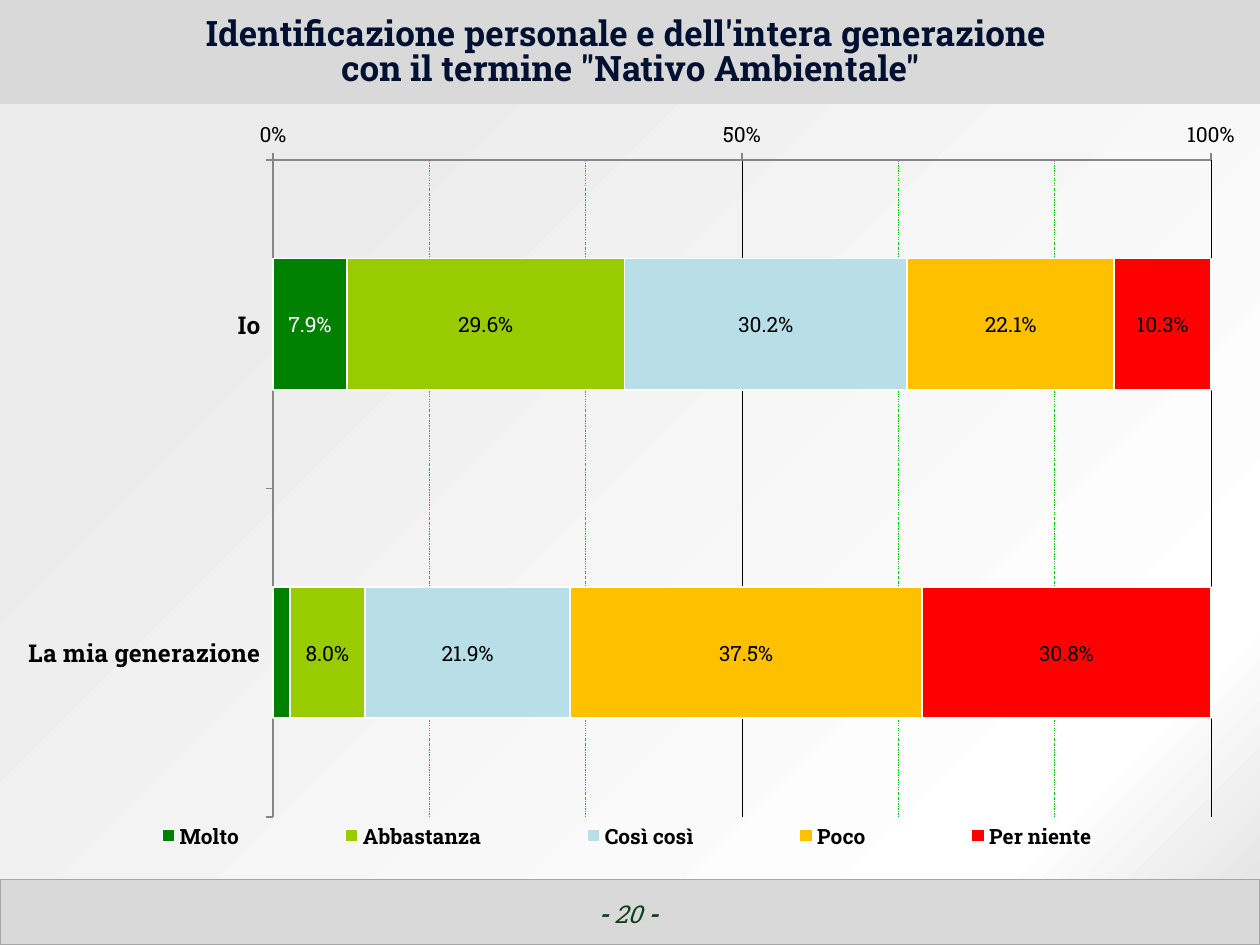
import pptx
import pptx.util
import pptx.chart.data
import pptx.dml.color
import pptx.enum.chart
import pptx.enum.shapes
import pptx.enum.text
import pptx.oxml
import pptx.oxml.ns

SCALE = 914400 / 126
FONT = "Roboto Slab"
INKS = {
    "band": "D9D9D9", "edge": "A6A6A6", "title": "001030", "page": "0D411A",
    "black": "000000", "white": "FFFFFF", "axis": "868686", "minor": "00CC00",
}
CATS = ["Io", "La mia generazione"]
ROWS = [  # name, values, fill
    ("Molto", (0.079, 0.018), "008000"),
    ("Abbastanza", (0.296, 0.08), "99CC00"),
    ("Così così", (0.302, 0.219), "B8DEE8"),
    ("Poco", (0.221, 0.375), "FFC000"),
    ("Per niente", (0.103, 0.308), "FF0000"),
]
STOPS = [(0, "E6E6E6"), (13, "FFFFFF"), (82, "ECECEC")]
CHART = (4, 105, 1256, 774)
PLOT = (273, 160, 938, 657)
LEGEND = (63, 820, 1128, 31)


def px(*nums):
    return [pptx.util.Emu(round(n * SCALE)) for n in nums]


def tint(hexa):
    return pptx.dml.color.RGBColor.from_string(hexa)


def put(item, **vals):
    for key, val in vals.items():
        setattr(item, key, val)


def style(font, size, ink, **vals):
    put(font, name=FONT, size=pptx.util.Pt(size), **vals)
    font.color.rgb = tint(ink)


def stroke(line, ink, width):
    line.color.rgb = tint(ink)
    line.width = pptx.util.Pt(width)


def band(slide, box, ink, edge=None):
    shape = slide.shapes.add_shape(
        pptx.enum.shapes.MSO_SHAPE.RECTANGLE, *px(*box))
    shape.shadow.inherit = False
    shape.fill.solid()
    shape.fill.fore_color.rgb = tint(ink)
    if edge:
        stroke(shape.line, edge, 0.75)
    else:
        shape.line.fill.background()
    return shape


def shade(shape):
    """Swap the plain fill for a round gradient from the lower right."""
    stops = "".join(
        f'<a:gs pos="{pos * 1000}"><a:srgbClr val="{ink}"/></a:gs>'
        for pos, ink in STOPS)
    grad = pptx.oxml.parse_xml(
        f'<a:gradFill {pptx.oxml.ns.nsdecls("a")} rotWithShape="1">'
        f'<a:gsLst>{stops}</a:gsLst><a:path path="circle">'
        '<a:fillToRect l="100000" t="100000"/></a:path></a:gradFill>')
    props = shape._element.spPr
    props.replace(props.find(pptx.oxml.ns.qn("a:solidFill")), grad)


def head(slide, text):
    title = slide.shapes.title
    left, top, width, height = px(20, 4, 1221, 99)
    put(title, left=left, top=top, width=width, height=height)
    put(title.text_frame, text=text, word_wrap=True,
        vertical_anchor=pptx.enum.text.MSO_ANCHOR.MIDDLE)
    para = title.text_frame.paragraphs[0]
    put(para, alignment=pptx.enum.text.PP_ALIGN.CENTER,
        line_spacing=pptx.util.Pt(20))
    for run in para.runs:
        style(run.font, 20, INKS["title"], bold=True)
    slide.shapes._spTree.append(title._element)  # above the top band


def page(slide):
    frame = slide.shapes.add_textbox(*px(481, 893, 294, 66)).text_frame
    frame.word_wrap = True
    para = frame.paragraphs[0]
    para.alignment = pptx.enum.text.PP_ALIGN.CENTER
    for text, bold in (("- ", True), ("20 ", False), ("-", True)):
        run = para.add_run()
        run.text = text
        style(run.font, 14, INKS["page"], bold=bold, italic=True)


def place(part, spot, box, inner=False):
    """Give a chart part a fixed place, as shares of the chart's size."""
    for old in part.findall(pptx.oxml.ns.qn("c:layout")):
        part.remove(old)
    shares = zip("xywh", (
        (box[0] - CHART[0]) / CHART[2], (box[1] - CHART[1]) / CHART[3],
        box[2] / CHART[2], box[3] / CHART[3]))
    target = '<c:layoutTarget val="inner"/>' if inner else ""
    modes = '<c:xMode val="edge"/><c:yMode val="edge"/>'
    sizes = "".join(f'<c:{key} val="{val:.4f}"/>' for key, val in shares)
    part.insert(spot, pptx.oxml.parse_xml(
        f'<c:layout {pptx.oxml.ns.nsdecls("c")}><c:manualLayout>'
        f'{target}{modes}{sizes}</c:manualLayout></c:layout>'))


def dash(axis):
    """Draw the minor gridlines as thin dashes and dots."""
    grid = axis._element.find(pptx.oxml.ns.qn("c:minorGridlines"))
    grid.append(pptx.oxml.parse_xml(
        f'<c:spPr {pptx.oxml.ns.nsdecls("c", "a")}><a:ln w="3175"><a:solidFill>'
        f'<a:srgbClr val="{INKS["minor"]}"/></a:solidFill>'
        '<a:prstDash val="dashDot"/></a:ln></c:spPr>'))


def axes(chart):
    cat, val = chart.category_axis, chart.value_axis
    out = pptx.enum.chart.XL_TICK_MARK.OUTSIDE
    put(cat, reverse_order=True, major_tick_mark=out, has_major_gridlines=False)
    put(val, minimum_scale=0, maximum_scale=1, major_unit=0.5,
        minor_unit=0.5 / 3, major_tick_mark=out,
        has_major_gridlines=True, has_minor_gridlines=True)
    put(val.tick_labels, number_format="0%", number_format_is_linked=False)
    style(cat.tick_labels.font, 14, INKS["black"], bold=True)
    style(val.tick_labels.font, 12, INKS["black"], bold=False)
    for axis in (cat, val):
        stroke(axis.format.line, INKS["axis"], 0.75)
    stroke(val.major_gridlines.format.line, INKS["black"], 0.25)
    dash(val)


def bars(plot):
    put(plot, gap_width=150, overlap=100, vary_by_categories=False)
    for num, (row, ser) in enumerate(zip(ROWS, plot.series)):
        ser.format.fill.solid()
        ser.format.fill.fore_color.rgb = tint(row[2])
        stroke(ser.format.line, INKS["white"], 1)
        tags = ser.data_labels
        put(tags, show_value=True, number_format="0.0%",
            number_format_is_linked=False,
            position=pptx.enum.chart.XL_LABEL_POSITION.CENTER)
        style(tags.font, 12, INKS["black" if num else "white"], bold=False)
    # The thinnest bar has no label
    plot.series[0].data_labels._element.insert(0, pptx.oxml.parse_xml(
        f'<c:dLbl {pptx.oxml.ns.nsdecls("c")}><c:idx val="1"/>'
        '<c:delete val="1"/></c:dLbl>'))


def graph(slide):
    data = pptx.chart.data.CategoryChartData(number_format="0.0%")
    data.categories = CATS
    for name, vals, _ in ROWS:
        data.add_series(name, vals)
    chart = slide.shapes.add_chart(
        pptx.enum.chart.XL_CHART_TYPE.BAR_STACKED_100, *px(*CHART), data).chart
    put(chart, has_title=False, has_legend=True)
    style(chart.font, 14, INKS["black"])
    axes(chart)
    bars(chart.plots[0])
    put(chart.legend, include_in_layout=False,
        position=pptx.enum.chart.XL_LEGEND_POSITION.BOTTOM)
    style(chart.legend.font, 12, INKS["black"], bold=True)
    area = chart._chartSpace.find(".//" + pptx.oxml.ns.qn("c:plotArea"))
    place(area, 0, PLOT, inner=True)
    place(chart.legend._element, 1, LEGEND)


def main():
    deck = pptx.Presentation()
    wide, high = px(1260, 945)
    put(deck, slide_width=wide, slide_height=high)
    slide = deck.slides.add_slide(deck.slide_layouts[5])
    # Backdrop
    band(slide, (0, 0, 1260, 106), INKS["band"])
    band(slide, (0, 879, 1260, 66), INKS["band"], INKS["edge"])
    shade(band(slide, (0, 104, 1260, 775), INKS["white"]))
    # Content
    page(slide)
    head(slide, "Identificazione personale e dell'intera generazione \v"
                "con il termine \"Nativo Ambientale\"")
    graph(slide)
    deck.save("out.pptx")


if __name__ == "__main__":
    main()
